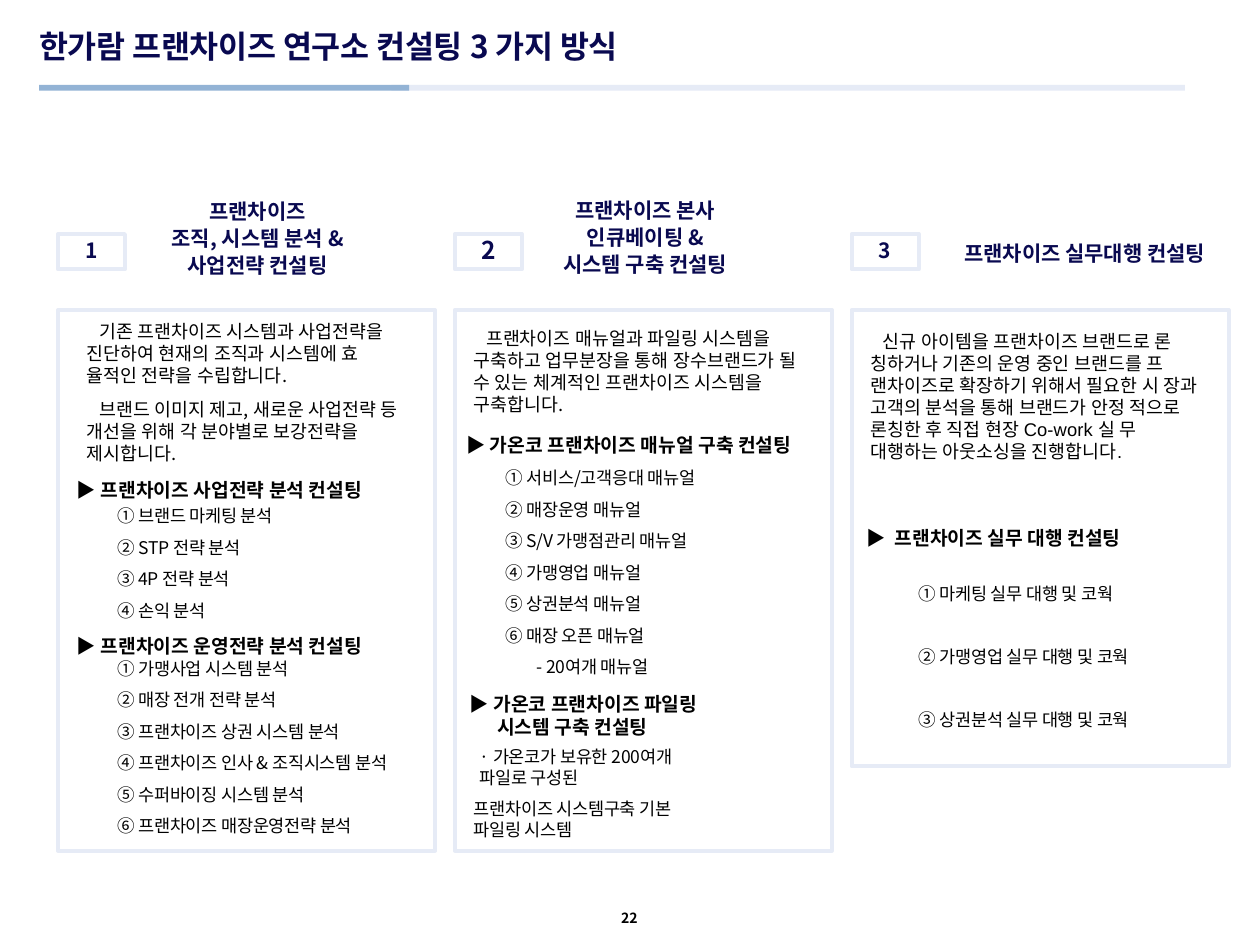
from lxml import etree
from pptx import Presentation
from pptx import util as u
from pptx.dml.color import RGBColor
from pptx.enum import shapes, text
from pptx.oxml.ns import qn

COLORS = {"navy": "090950", "pale": "E6EBF6", "blue": "93B3D5", "black": "000000"}
FONT = "Noto Sans CJK KR"
LINE_HEIGHT = 1.2  # times the text size

# Paragraph styles: size, bold, letter spacing in points
STYLES = {
    "title": (18, True, -0.1),
    "heading": (12, True, 0),
    "badge": (12, True, 0),
    "badge_large": (14, True, 0),
    "intro": (10.5, False, 0.1),
    "topic": (11, True, 0),
    "item": (10, False, -0.1),
    "page": (8, True, 0),
}


def intro(copy, left, before=0):
    return copy, "intro", left, 0.25, before


def topic(copy, left, before, first=0):
    return copy, "topic", left, first, before


def items(copies, left, before=6, gap=6):
    return [(copy, "item", left, 0, gap if i else before)
            for i, copy in enumerate(copies)]


# Each panel paragraph: text, style, left margin cm, first-line indent cm, space before pt
COLUMNS = [
    {
        "number": "1", "badge": "badge", "badge_inset": 0.07,
        "heading": ["프랜차이즈", "조직, 시스템 분석 &", "사업전략 컨설팅"],
        "heading_box": (1.98, 3.99, 4.09, 1.6), "height": 10.9, "inset": 0.2,
        "font": FONT,
        "body": [
            intro("기존 프랜차이즈 시스템과 사업전략을\v진단하여 현재의 조직과 시스템에 효\v"
                  "율적인 전략을 수립합니다.", 0.58),
            intro("브랜드 이미지 제고, 새로운 사업전략 등\v개선을 위해 각 분야별로 보강전략을\v"
                  "제시합니다.", 0.58, 7),
            topic("▶ 프랜차이즈 사업전략 분석 컨설팅", 0.38, 8),
            *items(["① 브랜드 마케팅 분석", "② STP 전략 분석", "③ 4P 전략 분석",
                    "④ 손익 분석"], 1.2, 2.1),
            topic("▶ 프랜차이즈 운영전략 분석 컨설팅", 0.38, 7.8),
            *items(["① 가맹사업 시스템 분석", "② 매장 전개 전략 분석",
                    "③ 프랜차이즈 상권 시스템 분석", "④ 프랜차이즈 인사 & 조직시스템 분석",
                    "⑤ 수퍼바이징 시스템 분석", "⑥ 프랜차이즈 매장운영전략 분석"], 1.2, 0.1),
        ],
    },
    {
        "number": "2", "badge": "badge_large", "badge_inset": 0.02,
        "heading": ["프랜차이즈 본사", "인큐베이팅 &", "시스템 구축 컨설팅"],
        "heading_box": (1.96, 3.96, 3.76, 1.65), "height": 10.9, "inset": 0.35,
        "font": FONT,
        "body": [
            intro("프랜차이즈 매뉴얼과 파일링 시스템을\v구축하고 업무분장을 통해 장수브랜드가 될\v"
                  "수 있는 체계적인 프랜차이즈 시스템을\v구축합니다.", 0.38),
            topic("▶ 가온코 프랜차이즈 매뉴얼 구축 컨설팅", 0.23, 10.2),
            *items(["① 서비스/고객응대 매뉴얼", "② 매장운영 매뉴얼",
                    "③ S/V 가맹점관리 매뉴얼", "④ 가맹영업 매뉴얼", "⑤ 상권분석 매뉴얼",
                    "⑥ 매장 오픈 매뉴얼"], 1.02),
            *items(["- 20여개 매뉴얼"], 1.65),
            topic("▶ 가온코 프랜차이즈 파일링\v시스템 구축 컨설팅", 0.85, 8.8, -0.55),
            *items(["· 가온코가 보유한 200여개\v파일로 구성된"], 0.5, 4.1),
            *items(["프랜차이즈 시스템구축 기본\v파일링 시스템"], 0.38),
        ],
    },
    {
        "number": "3", "badge": "badge", "badge_inset": 0.07,
        "heading": ["프랜차이즈 실무대행 컨설팅"],
        "heading_box": (1.88, 4.83, 5.64, 0.56), "height": 9.2, "inset": 0.4,
        "font": "Arial",
        "body": [
            intro("신규 아이템을 프랜차이즈 브랜드로 론\v칭하거나 기존의 운영 중인 브랜드를 프\v"
                  "랜차이즈로 확장하기 위해서 필요한 시 장과\v고객의 분석을 통해 브랜드가 안정 적으로\v"
                  "론칭한 후 직접 현장 Co-work 실 무\v대행하는 아웃소싱을 진행합니다.", 0.38),
            topic("▶  프랜차이즈 실무 대행 컨설팅", 0.3, 36.8),
            *items(["① 마케팅 실무 대행 및 코웍", "② 가맹영업 실무 대행 및 코웍",
                    "③ 상권분석 실무 대행 및 코웍"], 1.35, 19.2, 24),
        ],
    },
]


def rgb(name):
    return RGBColor.from_string(COLORS[name])


def cm_box(*lengths):
    return [u.Cm(length) for length in lengths]


def format_run(run, style, color, font):
    size, bold, spacing = STYLES[style]
    run.font.size, run.font.bold, run.font.name = u.Pt(size), bold, font
    run.font.color.rgb = rgb(color)
    props = run._r.get_or_add_rPr()
    props.set("spc", str(round(spacing * 100)))
    etree.SubElement(props, qn("a:ea")).set("typeface", FONT)


def write(shape, paragraphs, color, inset=0.02, align=text.PP_ALIGN.LEFT, font=FONT):
    frame = shape.text_frame
    frame.word_wrap = True
    frame.vertical_anchor = text.MSO_ANCHOR.TOP
    frame.margin_left = frame.margin_right = frame.margin_bottom = 0
    frame.margin_top = u.Cm(inset)
    for i, (copy, style, left, first, before) in enumerate(paragraphs):
        para = frame.add_paragraph() if i else frame.paragraphs[0]
        para.text = copy
        para.alignment = align
        para.space_before = u.Pt(before)
        para.line_spacing = u.Pt(STYLES[style][0] * LINE_HEIGHT)
        props = para._p.get_or_add_pPr()
        props.set("marL", str(u.Cm(left)))
        props.set("indent", str(u.Cm(first)))
        for run in para.runs:
            format_run(run, style, color, font)


def add_text(slide, box, paragraphs, color, **options):
    write(slide.shapes.add_textbox(*cm_box(*box)), paragraphs, color, **options)


def add_frame(slide, box):
    frame = slide.shapes.add_shape(shapes.MSO_SHAPE.RECTANGLE, *cm_box(*box))
    frame.shadow.inherit = False
    frame.fill.background()
    frame.line.color.rgb = rgb("pale")
    frame.line.width = u.Pt(2.28)
    return frame


def add_bar(slide, box, color):
    bar = add_frame(slide, box)
    bar.fill.solid()
    bar.fill.fore_color.rgb = rgb(color)
    bar.line.fill.background()


def add_header(slide, left, top):
    add_text(slide, (left, top, 16, 0.81),
             [("한가람 프랜차이즈 연구소 컨설팅 3 가지 방식", "title", 0, 0, 0)], "navy")
    add_bar(slide, (left + 7.1, top + 1.18, 16, 0.12), "pale")
    add_bar(slide, (left, top + 1.18, 7.46, 0.12), "blue")


def add_column(slide, column, left, width):
    center = text.PP_ALIGN.CENTER
    # Heading
    dx, top, heading_width, height = column["heading_box"]
    add_text(slide, (left + dx, top, heading_width, height),
             [(line, "heading", 0, 0, 1) for line in column["heading"]], "navy",
             align=center)
    # Number badge
    badge = add_frame(slide, (left, 4.72, 1.35, 0.71))
    write(badge, [(column["number"], column["badge"], 0, 0, 0)], "navy",
          inset=column["badge_inset"], align=center)
    # Panel
    panel = add_frame(slide, (left, 6.25, width, column["height"]))
    write(panel, column["body"], "black", inset=column["inset"], font=column["font"])


def main():
    deck = Presentation()
    deck.slide_width, deck.slide_height = cm_box(25.4, 19.05)
    slide = deck.slides.add_slide(deck.slide_layouts[6])
    add_header(slide, 0.79, 0.53)
    for i, column in enumerate(COLUMNS):
        add_column(slide, column, 1.17 + 8 * i, 7.6)
    # Page number
    add_text(slide, (12.42, 18.31, 0.58, 0.41), [("22", "page", 0.1, 0, 0)], "black")
    deck.save("out.pptx")


if __name__ == "__main__":
    main()
